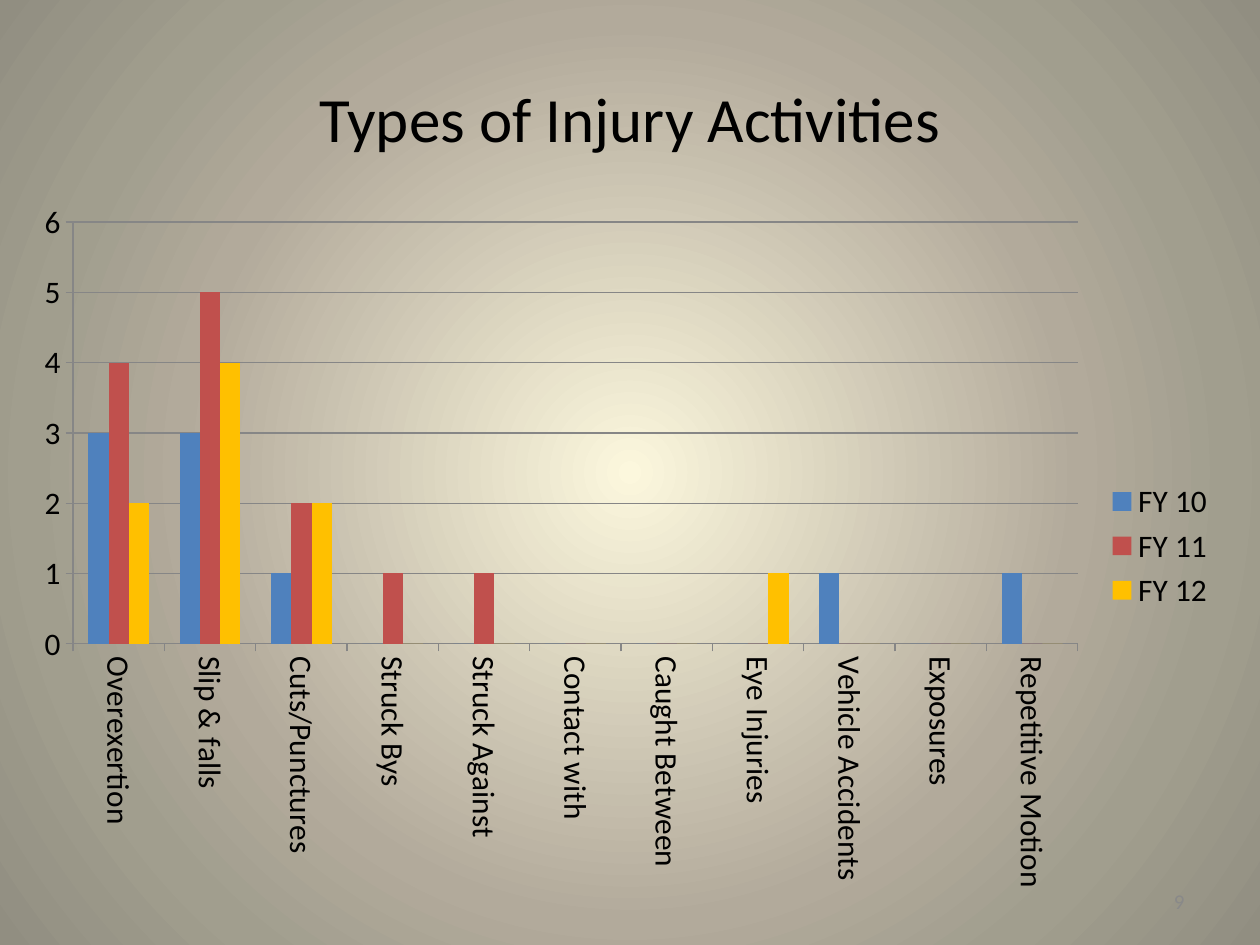
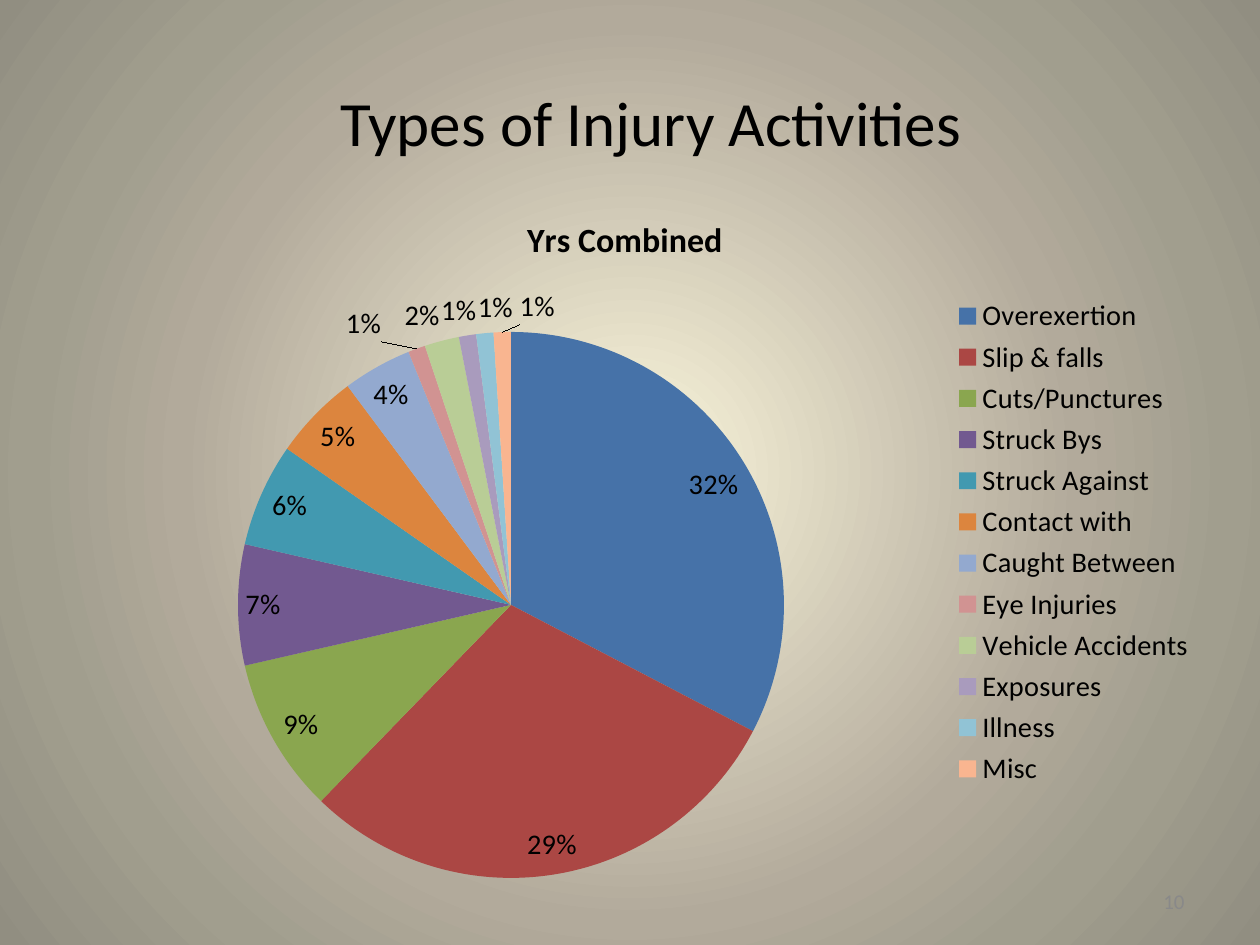
from lxml import etree
from pptx import Presentation
from pptx import util as u
from pptx.chart.data import CategoryChartData
from pptx.dml.color import RGBColor
from pptx.enum import chart as ch
from pptx.enum import text
from pptx.oxml.ns import qn

PX = 914400 // 126
FONT = "Calibri"
BLACK = RGBColor(0, 0, 0)
NUMBER_GREY = RGBColor(0x89, 0x89, 0x89)
LINE_GREY = RGBColor(0x86, 0x86, 0x86)
GLOW = [(0, "FCF7DD"), (57, "B2AA9B"), (76, "A19E8E"), (100, "918E81")]
YEAR_COLOURS = [RGBColor.from_string(c) for c in ("4F81BD", "C0504D", "FFC000")]
INJURY_COLOURS = [RGBColor.from_string(c) for c in (
    "4672A8", "AB4744", "8AA64F", "725990", "4299B0", "DC853E",
    "93A9CF", "D19392", "B9CD96", "A99BBD", "91C3D5", "F9B590")]

HEADING = "Types of Injury Activities"
INJURIES = ["Overexertion", "Slip & falls", "Cuts/Punctures", "Struck Bys",
            "Struck Against", "Contact with", "Caught Between", "Eye Injuries",
            "Vehicle Accidents", "Exposures"]
YEARS = {
    "FY 10": (3, 3, 1, 0, 0, 0, 0, 0, 1, 0, 1),
    "FY 11": (4, 5, 2, 1, 1, 0, 0, 0, 0, 0, 0),
    "FY 12": (2, 4, 2, 0, 0, 0, 0, 1, 0, 0, 0),
}
COMBINED = {"Yrs Combined": (0.32, 0.29, 0.09, 0.07, 0.06, 0.05,
                             0.04, 0.01, 0.02, 0.01, 0.01, 0.01)}


def emu(box):
    """Turn a px box into EMU lengths."""
    return [u.Emu(length * PX) for length in box]


def assign(target, **values):
    """Set each named attribute on the target."""
    for name, value in values.items():
        setattr(target, name, value)


def style_font(font, size, colour=BLACK, bold=False):
    """Apply the shared typeface with a size and colour."""
    assign(font, name=FONT, size=u.Pt(size), bold=bold)
    font.color.rgb = colour


def paint_background(master):
    """Give the master a round glow that darkens outwards."""
    master.background.fill.gradient()
    gradient = master.element.find(".//" + qn("a:gradFill"))
    for child in list(gradient):
        gradient.remove(child)
    stops = etree.SubElement(gradient, qn("a:gsLst"))
    for position, colour in GLOW:
        stop = etree.SubElement(stops, qn("a:gs"), pos=str(position * 1000))
        etree.SubElement(stop, qn("a:srgbClr"), val=colour)
    circle = etree.SubElement(gradient, qn("a:path"), path="circle")
    etree.SubElement(circle, qn("a:fillToRect"),
                     {side: "50000" for side in "ltrb"})


def add_page_number(slide, box, number):
    """Place the slide number field at the right of the box."""
    frame = slide.shapes.add_textbox(*emu(box)).text_frame
    assign(frame, word_wrap=True, vertical_anchor=text.MSO_ANCHOR.MIDDLE)
    paragraph = frame.paragraphs[0]
    paragraph.alignment = text.PP_ALIGN.RIGHT
    run = paragraph.add_run()
    run.text = str(number)
    style_font(run.font, 12, NUMBER_GREY)
    field = run._r
    field.tag = qn("a:fld")
    field.set("id", "{B6F15528-21DE-4FAA-801E-634DDDAF4B2B}")
    field.set("type", "slidenum")


def add_titled_slide(deck, title_box, number):
    """Add a slide with the shared heading and page number."""
    slide = deck.slides.add_slide(deck.slide_layouts[5])
    title = slide.shapes.title
    assign(title, **dict(zip(("left", "top", "width", "height"), emu(title_box))))
    frame = title.text_frame
    frame.text = HEADING
    frame.vertical_anchor = text.MSO_ANCHOR.MIDDLE
    frame.paragraphs[0].alignment = text.PP_ALIGN.CENTER
    style_font(frame.paragraphs[0].runs[0].font, 36)
    add_page_number(slide, (903, 876, 294, 50), number)
    return slide


def place_plot(chart, box, plot_box):
    """Fix the inner plot area, given in px within the chart box."""
    area = chart.element.find(".//" + qn("c:plotArea"))
    for old in area.findall(qn("c:layout")):
        area.remove(old)
    layout = etree.Element(qn("c:layout"))
    area.insert(0, layout)
    manual = etree.SubElement(layout, qn("c:manualLayout"))
    shares = [length / box[2 + i % 2] for i, length in enumerate(plot_box)]
    settings = [("layoutTarget", "inner"), ("xMode", "edge"), ("yMode", "edge")]
    settings += [(key, f"{share:.4f}") for key, share in zip("xywh", shares)]
    for key, value in settings:
        etree.SubElement(manual, qn("c:" + key), val=value)


def add_injury_chart(slide, kind, box, plot_box, categories, series, size):
    """Add a chart with the shared font, legend and plot placement."""
    data = CategoryChartData()
    data.categories = categories
    for name, values in series.items():
        data.add_series(name, values)
    chart = slide.shapes.add_chart(kind, *emu(box), data).chart
    style_font(chart.font, size)
    chart.has_legend = True
    assign(chart.legend, position=ch.XL_LEGEND_POSITION.RIGHT,
           include_in_layout=False)
    style_font(chart.legend.font, size)
    place_plot(chart, box, plot_box)
    return chart


def add_yearly_columns(slide, box):
    """Draw the injuries of each year as clustered columns."""
    chart = add_injury_chart(slide, ch.XL_CHART_TYPE.COLUMN_CLUSTERED, box,
                             (52, 33, 1005, 422),
                             INJURIES + ["Repetitive Motion"], YEARS, 17.9)
    chart.has_title = False
    plot = chart.plots[0]
    assign(plot, gap_width=150, overlap=0, vary_by_categories=False)
    for year, colour in zip(plot.series, YEAR_COLOURS):
        year.invert_if_negative = False
        year.format.fill.solid()
        year.format.fill.fore_color.rgb = colour
    counts, kinds = chart.value_axis, chart.category_axis
    assign(counts, minimum_scale=0, maximum_scale=6, major_unit=1,
           has_major_gridlines=True)
    for axis in (counts, kinds):
        axis.major_tick_mark = ch.XL_TICK_MARK.OUTSIDE
        style_font(axis.tick_labels.font, 17.9)
    for line in (counts.format.line, kinds.format.line,
                 counts.major_gridlines.format.line):
        line.color.rgb = LINE_GREY
        line.width = u.Pt(0.75)
    body = chart.element.find(".//" + qn("c:catAx")).find(".//" + qn("a:bodyPr"))
    body.set("rot", "5400000")
    body.set("vert", "horz")


def add_combined_pie(slide, box):
    """Draw the share of each injury over all years as a pie."""
    chart = add_injury_chart(slide, ch.XL_CHART_TYPE.PIE, box,
                             (196, 143, 546, 546),
                             INJURIES + ["Illness", "Misc"], COMBINED, 16.2)
    chart.has_title = True
    caption = chart.chart_title.text_frame
    caption.text = "Yrs Combined"
    style_font(caption.paragraphs[0].runs[0].font, 19.4, bold=True)
    plot = chart.plots[0]
    plot.vary_by_categories = True
    for i, colour in enumerate(INJURY_COLOURS):
        fill = plot.series[0].points[i].format.fill
        fill.solid()
        fill.fore_color.rgb = colour
    plot.has_data_labels = True
    labels = plot.data_labels
    assign(labels, show_value=True, show_percentage=False, number_format="0%",
           number_format_is_linked=False,
           position=ch.XL_LABEL_POSITION.BEST_FIT)
    style_font(labels.font, 16.2)


def main():
    """Build and save both slides."""
    deck = Presentation()
    assign(deck, slide_width=u.Inches(10), slide_height=u.Inches(7.5))
    deck.element.set("firstSlideNum", "9")
    paint_background(deck.slide_master)
    yearly = add_titled_slide(deck, (63, 38, 1134, 158), 9)
    add_yearly_columns(yearly, (21, 189, 1207, 714))
    combined = add_titled_slide(deck, (84, 42, 1134, 158), 10)
    add_combined_pie(combined, (42, 189, 1166, 707))
    deck.save("out.pptx")


if __name__ == "__main__":
    main()
